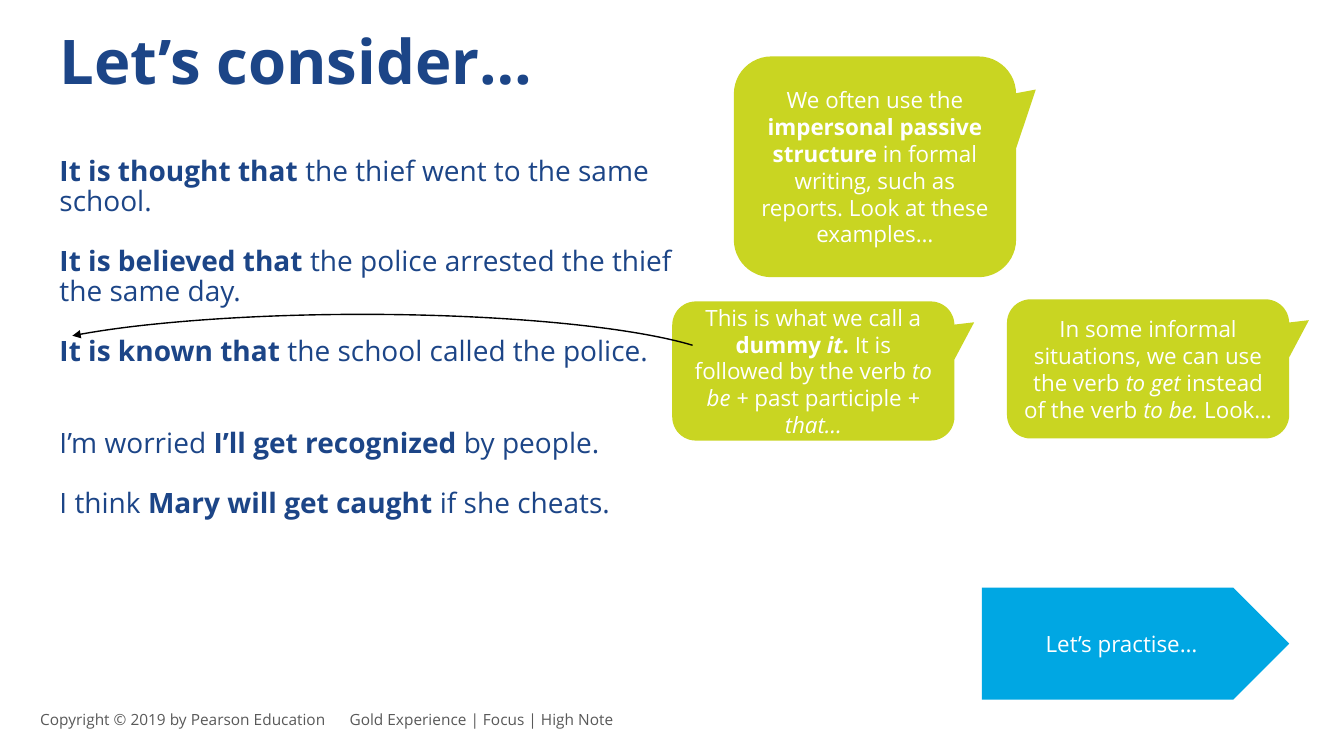
from dataclasses import dataclass
from typing import Any, NamedTuple

import pptx
import pptx.dml.color
import pptx.enum.shapes
import pptx.enum.text
import pptx.oxml
import pptx.oxml.ns
import pptx.util

Pt = pptx.util.Pt
Shapes = pptx.enum.shapes.MSO_SHAPE
Align = pptx.enum.text.PP_ALIGN
Anchor = pptx.enum.text.MSO_ANCHOR


@dataclass(frozen=True)
class Theme:
    font: str = "Open Sans"
    navy: str = "1C4587"
    lime: str = "C9D522"
    sky: str = "00A7E3"
    white: str = "FFFFFF"
    black: str = "000000"
    grey: str = "595959"
    title_size: float = 44
    list_size: float = 20
    bubble_size: float = 16
    footer_size: float = 11


THEME = Theme()


class Area(NamedTuple):
    left: float
    top: float
    width: float
    height: float


class Span(NamedTuple):
    text: str
    bold: bool = False
    italic: bool = False


@dataclass(frozen=True)
class Bubble:
    area: Area
    spans: list[Span]
    preset: Any = Shapes.ROUNDED_RECTANGULAR_CALLOUT
    fill: str = THEME.lime
    adjustments: tuple[float, ...] = (0.57, -0.35, 0.17)


@dataclass(frozen=True)
class Examples:
    area: Area
    sentences: list[list[Span]]


TITLE_AREA = Area(35.3, 18.7, 788.4, 63.4)
ARC_AREA = Area(218.2, 0, 81.4, 530.6)
FOOTER_AREA = Area(21.6, 499.7, 498.2, 28.8)
FOOTER_TAB = 221

EXAMPLES = [
    Examples(Area(35.3, 108.7, 469.4, 57.6), [
        [Span("It is thought that ", bold=True), Span("the thief went to the same school.")],
        [Span("It is believed that ", bold=True),
         Span("the police arrested the thief the same day.")],
        [Span("It is known that ", bold=True), Span("the school called the police.")],
    ]),
    Examples(Area(35.3, 303.1, 421.2, 99.4), [
        [Span("I’m worried "), Span("I’ll get recognized ", bold=True), Span("by people.")],
        [Span("I think "), Span("Mary will get caught ", bold=True), Span("if she cheats.")],
    ]),
]

BUBBLES = [
    Bubble(Area(701.3, 419.8, 219.6, 79.9), [Span("Let’s practise…")],
           Shapes.PENTAGON, THEME.sky, (0.5,)),
    Bubble(Area(524.2, 40.3, 201.6, 157.7), [
        Span("We often use the "),
        Span("impersonal passive structure ", bold=True),
        Span("in formal writing, such as reports. Look at these examples…"),
    ]),
    Bubble(Area(480.2, 215.3, 201.6, 99.4), [
        Span("This is what we call a "),
        Span("dummy ", bold=True),
        Span("it", bold=True, italic=True),
        Span(". ", bold=True),
        Span("It is followed by the verb "),
        Span("to be + ", italic=True),
        Span("past participle "),
        Span("+ that…", italic=True),
    ]),
    Bubble(Area(719.3, 213.8, 201.6, 99.4), [
        Span("In some informal situations, we can use the verb "),
        Span("to get ", italic=True),
        Span("instead of the verb "),
        Span("to be. ", italic=True),
        Span("Look…"),
    ]),
]


def apply(target: Any, values: dict[str, Any]) -> None:
    for name, value in values.items():
        setattr(target, name, value)


def colour(code: str) -> Any:
    return pptx.dml.color.RGBColor.from_string(code)


def points(area: Area) -> tuple[Any, ...]:
    return tuple(Pt(length) for length in area)


def add_child(parent: Any, tag: str, **attributes: str) -> Any:
    child = pptx.oxml.ns.qn(tag)
    element = parent.makeelement(child, attributes)
    parent.append(element)
    return element


def set_frame(box: Any, anchor: Any, side: float = 7.2, edge: float = 3.6) -> None:
    apply(box.text_frame, {
        "word_wrap": True, "auto_size": pptx.enum.text.MSO_AUTO_SIZE.NONE,
        "vertical_anchor": anchor, "margin_left": Pt(side), "margin_right": Pt(side),
        "margin_top": Pt(edge), "margin_bottom": Pt(edge),
    })


def write(para: Any, spans: list[Span], size: float, code: str, **layout: Any) -> None:
    apply(para, layout)
    for span in spans:
        run = para.add_run()
        run.text = span.text
        apply(run.font, {"name": THEME.font, "size": Pt(size),
                         "bold": span.bold, "italic": span.italic})
        run.font.color.rgb = colour(code)


def place(box: Any, area: Area) -> None:
    apply(box, dict(zip(Area._fields, points(area))))
    set_frame(box, Anchor.TOP)


def fill_examples(box: Any, examples: Examples) -> None:
    place(box, examples.area)
    frame = box.text_frame
    for index, sentence in enumerate(examples.sentences):
        para = frame.add_paragraph() if index else frame.paragraphs[0]
        properties = para._p.get_or_add_pPr()
        apply_indent = {"marL": "0", "indent": "0"}
        for name, value in apply_indent.items():
            properties.set(name, value)
        add_child(properties, "a:buNone")
        write(para, sentence, THEME.list_size, THEME.navy, alignment=Align.LEFT,
              line_spacing=0.9, space_before=Pt(0), space_after=Pt(21))


def draw_bubble(page: Any, bubble: Bubble) -> None:
    box = page.shapes.add_shape(bubble.preset, *points(bubble.area))
    box.shadow.inherit = False
    for index, value in enumerate(bubble.adjustments):
        box.adjustments[index] = value
    box.fill.solid()
    box.fill.fore_color.rgb = colour(bubble.fill)
    box.line.fill.background()
    set_frame(box, Anchor.MIDDLE)
    write(box.text_frame.paragraphs[0], bubble.spans, THEME.bubble_size, THEME.white,
          alignment=Align.CENTER)


def draw_arc(page: Any) -> None:
    arc = page.shapes.add_shape(Shapes.ARC, *points(ARC_AREA))
    arc.shadow.inherit = False
    arc.adjustments[0], arc.adjustments[1] = 56.71, 157.8
    arc.rotation = 90
    arc._element.spPr.get_or_add_xfrm().set("flipV", "1")
    arc.fill.background()
    arc.line.color.rgb = colour(THEME.black)
    arc.line.width = Pt(1)
    add_child(arc.line._get_or_add_ln(), "a:tailEnd", type="triangle")


def draw_footer(page: Any) -> None:
    box = page.shapes.add_textbox(*points(FOOTER_AREA))
    set_frame(box, Anchor.MIDDLE, edge=7.2)
    para = box.text_frame.paragraphs[0]
    tabs = add_child(para._p.get_or_add_pPr(), "a:tabLst")
    add_child(tabs, "a:tab", pos=str(Pt(FOOTER_TAB)), algn="l")
    line = "Copyright © 2019 by Pearson Education\tGold Experience | Focus | High Note"
    write(para, [Span(line)], THEME.footer_size, THEME.grey)


def main() -> None:
    deck = pptx.Presentation()
    apply(deck, {"slide_width": Pt(960), "slide_height": Pt(540)})
    page = deck.slides.add_slide(deck.slide_layouts.get_by_name("Two Content"))

    # Title and example sentences
    title, *bodies = page.placeholders
    place(title, TITLE_AREA)
    write(title.text_frame.paragraphs[0], [Span("Let’s consider…", bold=True)],
          THEME.title_size, THEME.navy, alignment=Align.LEFT, line_spacing=0.9)
    for body, examples in zip(bodies, EXAMPLES):
        fill_examples(body, examples)

    # Callouts, the arrow to the dummy "it", and the footer
    for bubble in BUBBLES:
        draw_bubble(page, bubble)
    draw_arc(page)
    draw_footer(page)
    deck.save("out.pptx")


if __name__ == "__main__":
    main()
